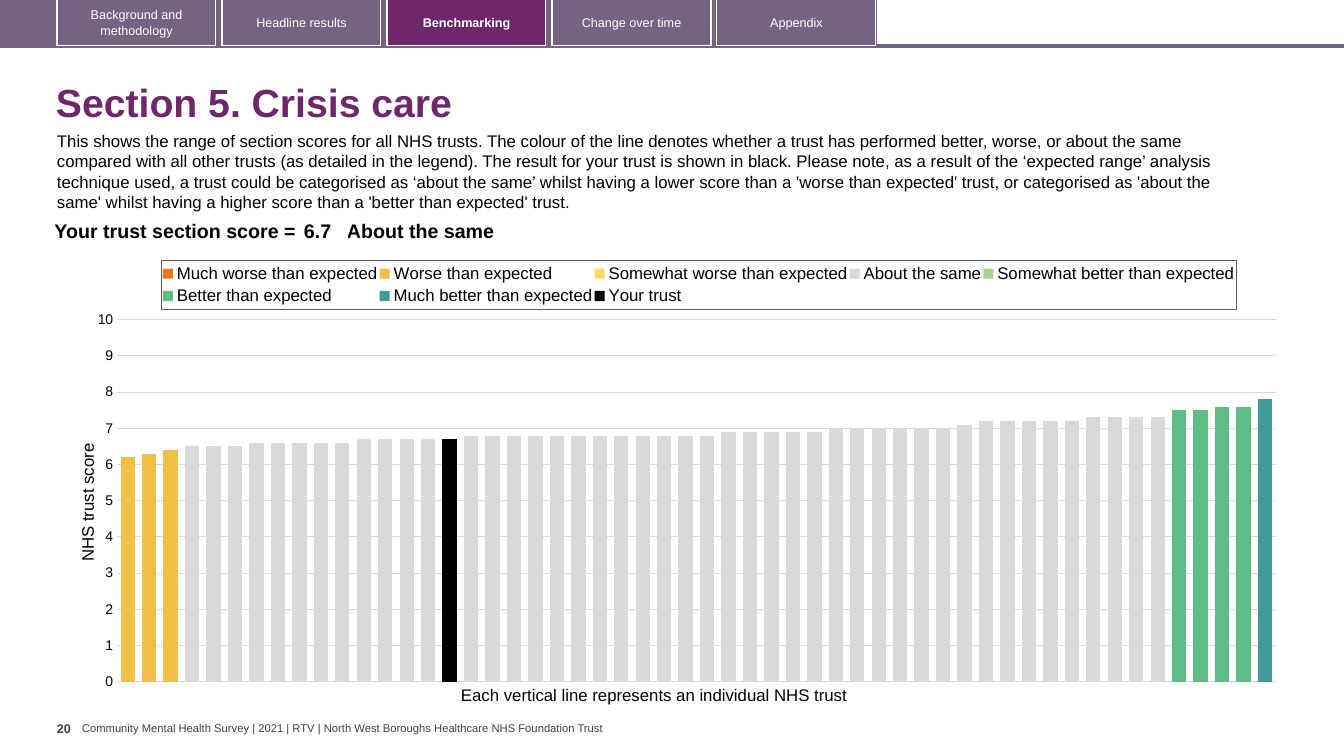
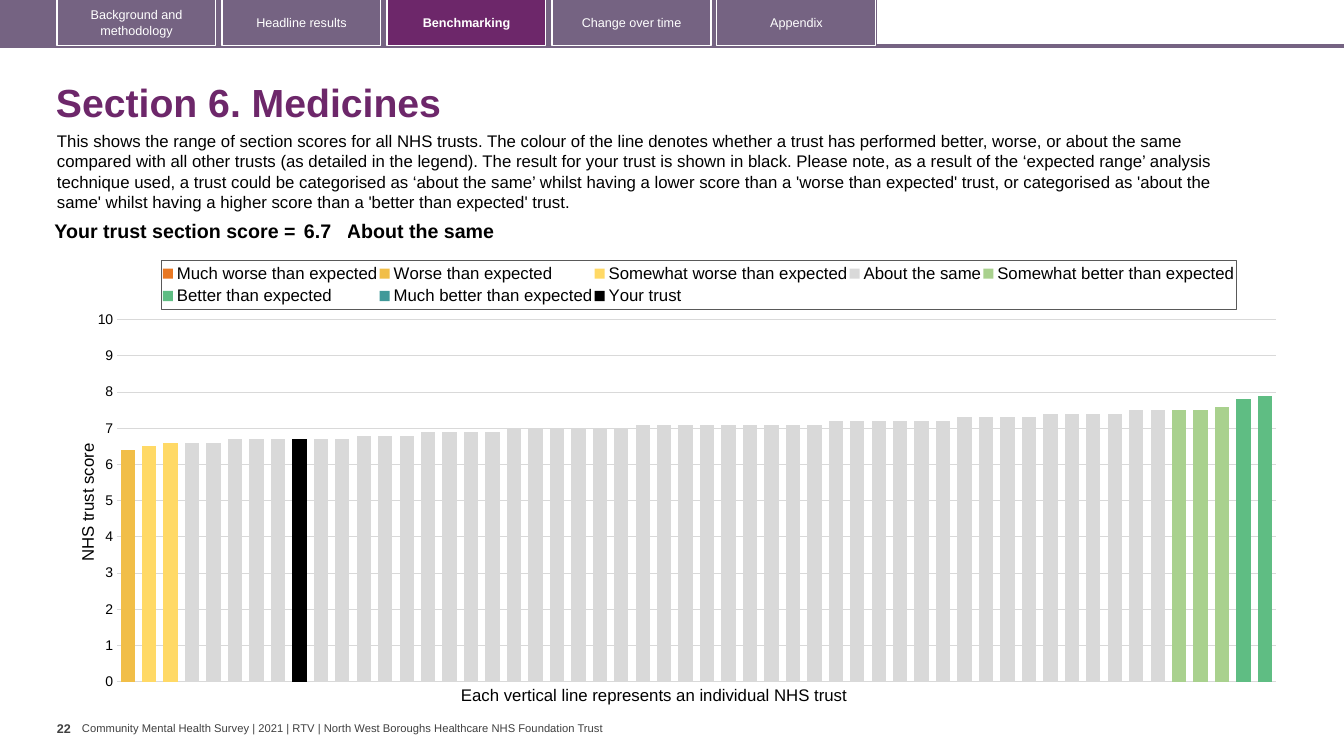
from copy import deepcopy
from dataclasses import dataclass
from lxml import etree
from pptx import Presentation
from pptx import util as u
from pptx.chart import data as chart_data
from pptx.dml import color
from pptx.enum import chart as charts, shapes, text
from pptx.oxml import ns


@dataclass(frozen=True)
class Theme:
    font: str = "Arial"
    chart_font: str = "Calibri"
    band: str = "756382"
    accent: str = "6D276A"
    ink: str = "000000"
    muted: str = "404040"
    white: str = "FFFFFF"
    grid: str = "D9D9D9"
    frame: str = "595959"
    title: int = 28
    score: int = 14
    body: int = 12
    tick: int = 10
    small: int = 9
    footer: int = 8


THEME = Theme()
PX = 914400 / 100.8
WIDTH, HEIGHT = 1344, 756

# Content
TABS = ["Background and methodology", "Headline results", "Benchmarking",
        "Change over time", "Appendix"]
ACTIVE_TAB = "Benchmarking"
FOOTER = ("Community Mental Health Survey | 2021 | RTV | "
          "North West Boroughs Healthcare NHS Foundation Trust")
INTRO = (
    "This shows the range of section scores for all NHS trusts. The colour of the line "
    "denotes whether a trust has performed better, worse, or about the same compared with "
    "all other trusts (as detailed in the legend). The result for your trust is shown in "
    "black. Please note, as a result of the ‘expected range’ analysis technique used, a "
    "trust could be categorised as ‘about the same’ whilst having a lower score than a "
    "'worse than expected' trust, or categorised as 'about the same' whilst having a higher "
    "score than a 'better than expected' trust.")
SCORE_LABEL = "Your trust section score ="
VALUE_TITLE = "NHS trust score"
CATEGORY_TITLE = "Each vertical line represents an individual NHS trust"
RATINGS = {
    "Much worse than expected": "E87722",
    "Worse than expected": "F1BE48",
    "Somewhat worse than expected": "FFD966",
    "About the same": "D9D9D9",
    "Somewhat better than expected": "A9D18E",
    "Better than expected": "5FBD83",
    "Much better than expected": "419999",
}
OWN_TRUST = "Your trust"

# Scores run from low to high, as (score, number of trusts) for each rating
SECTIONS = [
    dict(page="20", title="Section 5. Crisis care", score=6.7,
         result="About the same", position=16, ratings={
             "Worse than expected": [(6.2, 1), (6.3, 1), (6.4, 1)],
             "About the same": [(6.5, 3), (6.6, 5), (6.7, 5), (6.8, 12), (6.9, 5),
                                (7, 6), (7.1, 1), (7.2, 5), (7.3, 4)],
             "Better than expected": [(7.5, 2), (7.6, 2)],
             "Much better than expected": [(7.8, 1)]}),
    dict(page="22", title="Section 6. Medicines", score=6.7,
         result="About the same", position=9, ratings={
             "Worse than expected": [(6.4, 1)],
             "Somewhat worse than expected": [(6.5, 1), (6.6, 1)],
             "About the same": [(6.6, 2), (6.7, 6), (6.8, 3), (6.9, 4), (7, 6),
                                (7.1, 9), (7.2, 6), (7.3, 4), (7.4, 4), (7.5, 2)],
             "Somewhat better than expected": [(7.5, 2), (7.6, 1)],
             "Better than expected": [(7.8, 1), (7.9, 1)]}),
]


def px(*lengths):
    return [u.Emu(round(length * PX)) for length in lengths]


def rgb(value):
    return color.RGBColor.from_string(value)


def style_font(font, size, ink=THEME.ink, bold=False, name=THEME.font):
    font.name, font.size, font.bold = name, u.Pt(size), bold
    font.color.rgb = rgb(ink)


def write_text(frame, words, size=THEME.body, ink=THEME.ink, bold=False, align=None,
               spacing=None):
    paragraph = frame.paragraphs[0]
    paragraph.alignment, paragraph.line_spacing = align, spacing
    run = paragraph.add_run()
    run.text = words
    style_font(run.font, size, ink, bold)


def add_label(slide, box, words, anchor=text.MSO_ANCHOR.TOP, insets=(10, 5), **style):
    frame = slide.shapes.add_textbox(*px(*box)).text_frame
    frame.word_wrap, frame.vertical_anchor = True, anchor
    frame.margin_left, frame.margin_top = px(*insets)
    frame.margin_right, frame.margin_bottom = px(*insets)
    write_text(frame, words, **style)


def add_box(slide, box, fill=None, line=None):
    shape = slide.shapes.add_shape(shapes.MSO_SHAPE.RECTANGLE, *px(*box))
    shape.shadow.inherit = False
    for part, value in ((shape.fill, fill), (shape.line.fill, line)):
        if value:
            part.solid()
            part.fore_color.rgb = rgb(value)
        else:
            part.background()
    if line:
        shape.line.width = u.Pt(0.75)
    return shape


def add_frame(slide, page):
    # Navigation band and tabs
    add_box(slide, (0, 44, WIDTH, 4), THEME.band)
    add_box(slide, (0, 0, 877, 47), THEME.band)
    for index, name in enumerate(TABS):
        active = name == ACTIVE_TAB
        tab = add_box(slide, (57 + index * 165, -1, 159, 47),
                      THEME.accent if active else None, THEME.white)
        tab.text_frame.word_wrap = True
        tab.text_frame.vertical_anchor = text.MSO_ANCHOR.MIDDLE
        write_text(tab.text_frame, name, THEME.small, THEME.white, active,
                   text.PP_ALIGN.CENTER)
    # Footer
    add_label(slide, (82, 722, 534, 13), FOOTER, text.MSO_ANCHOR.MIDDLE, (0, 0),
              size=THEME.footer, ink=THEME.muted)
    add_label(slide, (57, 716, 25, 40), page, insets=(0, 5),
              size=THEME.small, ink=THEME.muted, bold=True)


def add_score(slide, section):
    widths = px(265, 47, 866)
    table = slide.shapes.add_table(1, 3, *px(35, 217, 1178, 31)).table
    table.first_row = table.horz_banding = False
    words = [SCORE_LABEL, str(section["score"]), section["result"]]
    for index, cell in enumerate(table.rows[0].cells):
        table.columns[index].width = widths[index]
        cell.fill.background()
        side, edge = px(0 if index == 2 else 4, 4)
        cell.margin_left = cell.margin_right = side
        cell.margin_top = cell.margin_bottom = edge
        write_text(cell.text_frame, words[index], THEME.score, bold=True,
                   align=None if index else text.PP_ALIGN.RIGHT)


def chart_element(tag, **attributes):
    element = etree.Element(ns.qn(tag))
    for name, value in attributes.items():
        element.set(name, str(value))
    return element


def set_layout(parent, follower, inner=False, **extent):
    """Give a chart part a fixed place, as fractions of the chart."""
    for old in parent.findall(ns.qn("c:layout")):
        parent.remove(old)
    layout = chart_element("c:layout")
    manual = etree.SubElement(layout, ns.qn("c:manualLayout"))
    if inner:
        manual.append(chart_element("c:layoutTarget", val="inner"))
    for side in ("x", "y"):
        manual.append(chart_element(f"c:{side}Mode", val="edge"))
    for side, value in extent.items():
        manual.append(chart_element(f"c:{side}", val=value))
    parent.insert(0, layout) if follower is None else follower.addprevious(layout)


def move_last_series_to_second_axis(chart):
    plot = chart.plots[0]._element
    area = plot.getparent()
    second = deepcopy(plot)
    plot.remove(plot.findall(ns.qn("c:ser"))[-1])
    for series in second.findall(ns.qn("c:ser"))[:-1]:
        second.remove(series)
    plot.addnext(second)
    for axis_id, new_id in zip(second.findall(ns.qn("c:axId")), ("1001", "1002")):
        axis_id.set("val", new_id)

    category = deepcopy(chart.category_axis._element)
    value = deepcopy(chart.value_axis._element)
    for axis, own, other in ((value, "1002", "1001"), (category, "1001", "1002")):
        axis.find(ns.qn("c:axId")).set("val", own)
        axis.find(ns.qn("c:crossAx")).set("val", other)
        area.findall(ns.qn("c:valAx"))[-1].addnext(axis)
    for tag in ("c:majorGridlines", "c:title"):
        value.remove(value.find(ns.qn(tag)))
    for tag, setting in (("axPos", "r"), ("tickLblPos", "none"), ("crosses", "max")):
        value.find(ns.qn(f"c:{tag}")).set("val", setting)


def build_chart_data(section):
    total = sum(count for runs in section["ratings"].values() for _, count in runs)
    data = chart_data.CategoryChartData(number_format="General")
    data.categories = [str(number) for number in range(1, total + 1)]
    start = 0
    for name in RATINGS:
        runs = section["ratings"].get(name, [])
        scores = [score for score, count in runs for _ in range(count)]
        values = [None] * total
        values[start:start + len(scores)] = scores
        start += len(scores)
        data.add_series(name, values)
    own = [None] * total
    own[section["position"] - 1] = section["score"]
    data.add_series(OWN_TRUST, own)
    return data


def add_scores_chart(slide, section):
    chart = slide.shapes.add_chart(charts.XL_CHART_TYPE.COLUMN_CLUSTERED,
                                   *px(68, 249, 1225, 448),
                                   build_chart_data(section)).chart
    chart.has_title = False
    style_font(chart.font, THEME.tick, name=THEME.chart_font)
    plot = chart.plots[0]
    plot.gap_width, plot.overlap, plot.vary_by_categories = 50, 100, False
    for series, fill in zip(plot.series, [*RATINGS.values(), THEME.ink]):
        series.format.fill.solid()
        series.format.fill.fore_color.rgb = rgb(fill)
        series.invert_if_negative = False

    # Axes
    chart.category_axis.visible = False
    axis = chart.value_axis
    axis.minimum_scale, axis.maximum_scale, axis.major_unit = 0, 10, 1
    axis.major_tick_mark = axis.minor_tick_mark = charts.XL_TICK_MARK.NONE
    axis.tick_label_position = charts.XL_TICK_LABEL_POSITION.NEXT_TO_AXIS
    axis.format.line.fill.background()
    style_font(axis.tick_labels.font, THEME.tick)
    axis.has_major_gridlines = True
    grid = axis.major_gridlines.format.line
    grid.width, grid.color.rgb = u.Pt(0.75), rgb(THEME.grid)
    write_text(axis.axis_title.text_frame, VALUE_TITLE)
    title = axis.axis_title._element
    body = title.find(".//" + ns.qn("a:bodyPr"))
    body.set("rot", "-5400000")
    body.set("vert", "horz")
    set_layout(title, title.find(ns.qn("c:overlay")), x=0.005, y=0.427)
    set_layout(plot._element.getparent(), None, inner=True,
               x=0.04, y=0.158, w=0.946, h=0.808)

    # Legend
    chart.has_legend = True
    legend = chart.legend
    legend.position, legend.include_in_layout = charts.XL_LEGEND_POSITION.TOP, False
    style_font(legend.font, THEME.body)
    overlay = legend._element.find(ns.qn("c:overlay"))
    set_layout(legend._element, overlay, x=0.076, y=0.025, w=0.878, h=0.11)
    outline = chart_element("c:spPr")
    line = etree.SubElement(outline, ns.qn("a:ln"), w=str(u.Pt(0.75)))
    fill = etree.SubElement(line, ns.qn("a:solidFill"))
    etree.SubElement(fill, ns.qn("a:srgbClr"), val=THEME.frame)
    overlay.addnext(outline)
    move_last_series_to_second_axis(chart)


def add_section(presentation, section):
    slide = presentation.slides.add_slide(presentation.slide_layouts[6])
    add_frame(slide, section["page"])
    add_label(slide, (46, 68, 1259, 73), section["title"], text.MSO_ANCHOR.MIDDLE,
              size=THEME.title, ink=THEME.accent, bold=True, spacing=0.9)
    add_label(slide, (47, 126, 1223, 92), INTRO)
    add_label(slide, (451, 680, 414, 30), CATEGORY_TITLE)
    add_scores_chart(slide, section)
    add_score(slide, section)


def main():
    presentation = Presentation()
    presentation.slide_width, presentation.slide_height = px(WIDTH, HEIGHT)
    for section in SECTIONS:
        add_section(presentation, section)
    presentation.save("out.pptx")


if __name__ == "__main__":
    main()
